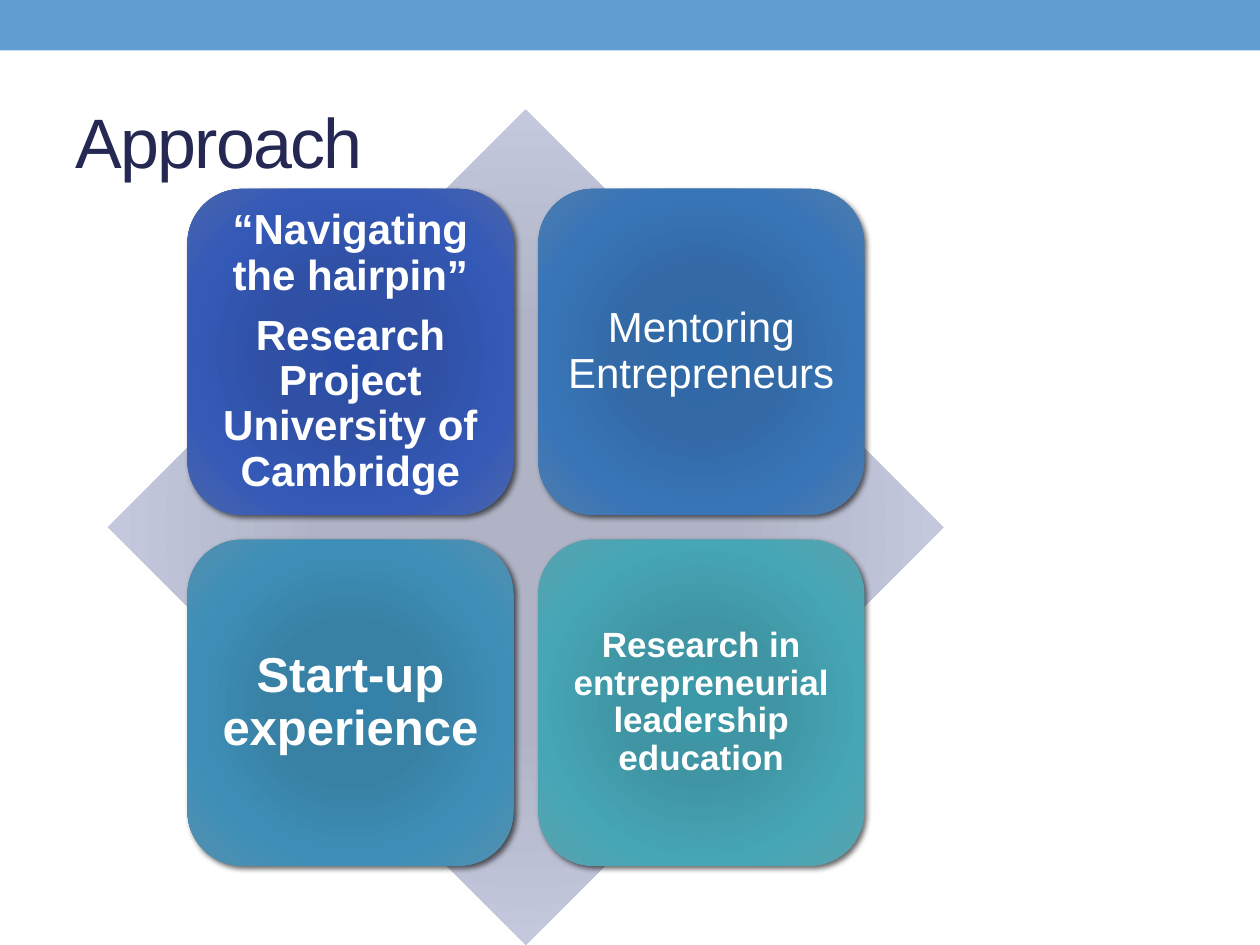
import pptx
import pptx.dml.color
import pptx.enum.shapes
import pptx.enum.text
import pptx.oxml
import pptx.oxml.ns
import pptx.util

Cm = pptx.util.Cm
Pt = pptx.util.Pt
SHAPES = pptx.enum.shapes.MSO_SHAPE
ALIGN = pptx.enum.text.PP_ALIGN
MIDDLE = pptx.enum.text.MSO_ANCHOR.MIDDLE

CARDS = [
    (["“Navigating the hairpin”", "Research Project University of Cambridge"],
     24, True, 0.25, ["2A4EA8", "2F50A4", "3459B7", "4A66AC"]),
    (["Mentoring Entrepreneurs"],
     24, False, 0.25, ["2E69A9", "3369A5", "3875B8", "4E7CAE"]),
    (["Start-up experience"],
     28, True, 0.3, ["3482A9", "3881A5", "3E8FB8", "5490AE"]),
    (["Research in entrepreneurial leadership education"],
     20, True, 0.2, ["3B98A7", "3F95A3", "46A6B6", "5AA2AE"]),
]


def color(hex_value):
    return pptx.dml.color.RGBColor.from_string(hex_value)


def drawing_xml(markup):
    head, rest = markup.split(" ", 1)
    return pptx.oxml.parse_xml(f"{head} {pptx.oxml.ns.nsdecls('a')} {rest}")


def add_plain_shape(page, kind, left, top, width, height):
    shape = page.shapes.add_shape(kind, Cm(left), Cm(top), Cm(width), Cm(height))
    shape.shadow.inherit = False
    shape.line.fill.background()
    return shape


def fill_radial(shape, hex_values):
    stops = "".join(
        f'<a:gs pos="{position * 1000}"><a:srgbClr val="{value}"/></a:gs>'
        for position, value in zip((0, 34, 70, 100), hex_values))
    gradient = drawing_xml(
        f'<a:gradFill rotWithShape="1"><a:gsLst>{stops}</a:gsLst><a:path path="circle">'
        '<a:fillToRect l="100000" t="100000" r="100000" b="100000"/></a:path></a:gradFill>')
    shape.element.spPr.find(pptx.oxml.ns.qn("a:prstGeom")).addnext(gradient)


def add_soft_shadow(shape):
    effects = shape.element.spPr.find(pptx.oxml.ns.qn("a:effectLst"))
    effects.append(drawing_xml(
        '<a:outerShdw blurRad="38100" dist="25400" dir="2700000" rotWithShape="0">'
        '<a:srgbClr val="000000"><a:alpha val="60000"/></a:srgbClr></a:outerShdw>'))


def write_text(para, text, size, hex_value, bold=False, align=ALIGN.LEFT,
               line_spacing=None, space_after=None, tracking=None):
    para.alignment = align
    para.line_spacing = line_spacing
    para.space_after = space_after
    span = para.add_run()
    span.text = text
    span.font.name = "Arial"
    span.font.size = Pt(size)
    span.font.bold = bold
    span.font.color.rgb = color(hex_value)
    if tracking is not None:
        span.font.element.set("spc", str(tracking)) if hasattr(span.font, "element") \
            else span.text and para.runs[-1]._r.get_or_add_rPr().set("spc", str(tracking))


def add_header(page, width):
    bar = add_plain_shape(page, SHAPES.RECTANGLE, 0, 0, width, 1.02)
    bar.fill.solid()
    bar.fill.fore_color.rgb = color("629DD1")
    title = page.shapes.title
    title.left, title.top, title.width, title.height = Cm(1.27), Cm(1.47), Cm(22.86), Cm(2.74)
    title.text_frame.vertical_anchor = MIDDLE
    write_text(title.text_frame.paragraphs[0], "Approach", 40, "242852", tracking=-100)


def add_card(page, left, top, side, texts, size, bold, inset, hex_values):
    card = add_plain_shape(page, SHAPES.ROUNDED_RECTANGLE, left, top, side, side)
    fill_radial(card, hex_values)
    add_soft_shadow(card)
    frame = card.text_frame
    frame.word_wrap = True
    frame.vertical_anchor = MIDDLE
    frame.margin_left = frame.margin_top = Cm(inset)
    frame.margin_right = frame.margin_bottom = Cm(inset)
    for index, text in enumerate(texts):
        para = frame.add_paragraph() if index else frame.paragraphs[0]
        write_text(para, text, size, "FFFFFF", bold=bold, align=ALIGN.CENTER,
                   line_spacing=0.9, space_after=Pt(size * 0.35))


def add_matrix(page, left, top, side):
    diamond = add_plain_shape(page, SHAPES.DIAMOND, left, top, side, side)
    fill_radial(diamond, ["AEB2C6", "AFB3C5", "C3C8DC", "D0D3E3"])
    margin, card_side = side * 0.095, side * 0.39
    pitch = side - 2 * margin - card_side
    for index, card in enumerate(CARDS):
        row, column = divmod(index, 2)
        add_card(page, left + margin + column * pitch, top + margin + row * pitch,
                 card_side, *card)


def main():
    deck = pptx.Presentation()
    deck.slide_width, deck.slide_height = Cm(25.4), Cm(19.05)
    page = deck.slides.add_slide(deck.slide_layouts[5])
    add_header(page, 25.4)
    add_matrix(page, 2.18, 2.21, 16.84)
    deck.save("out.pptx")


if __name__ == "__main__":
    main()
